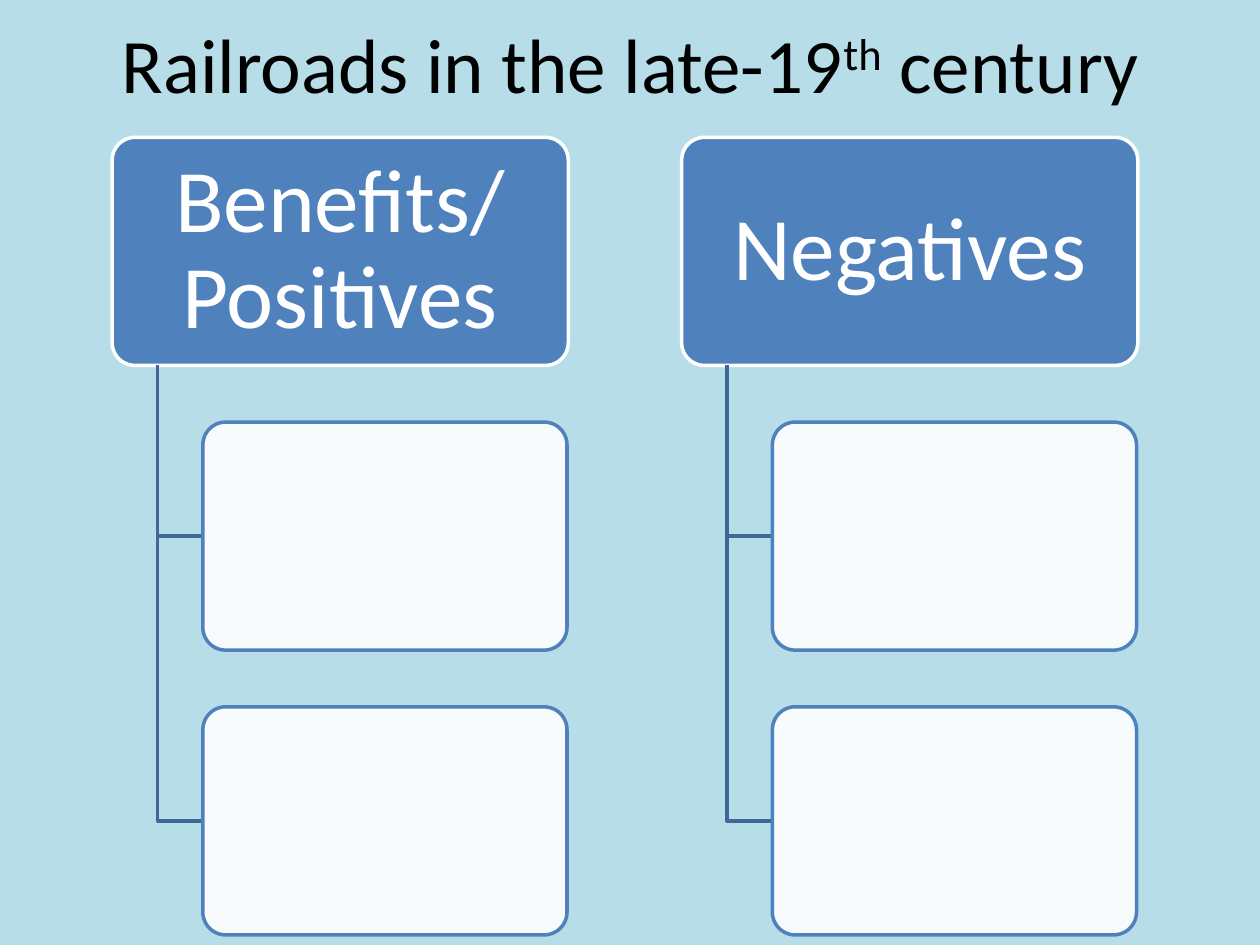
from dataclasses import dataclass

from lxml.etree import SubElement
from pptx import Presentation
from pptx.dml.color import RGBColor
from pptx.dml.fill import FillFormat
from pptx.enum.shapes import MSO_SHAPE
from pptx.enum.text import MSO_ANCHOR, PP_ALIGN
from pptx.oxml.ns import qn
from pptx.shapes.autoshape import Shape
from pptx.slide import Slide
from pptx.util import Inches, Pt

BACKGROUND, BLUE, DARK_BLUE = "B7DEE8", "4F81BD", "3F6797"
WHITE, BLACK = "FFFFFF", "000000"

# Every box has the same height; rows repeat at an equal pitch
BOX_HEIGHT = 1.81
HEADING_TOP, HEADING_WIDTH = 1.09, 3.62
ROW_PITCH = 2.26
ANSWER_INDENT, ANSWER_WIDTH = 0.72, 2.89
STEM_INDENT = ANSWER_INDENT / 2
ANSWER_ROWS = 2


@dataclass
class Branch:
    heading: str
    left: float


BRANCHES = [Branch("Benefits/ Positives", 0.89), Branch("Negatives", 5.41)]


def paint(fill: FillFormat, color: str) -> None:
    fill.solid()
    fill.fore_color.rgb = RGBColor.from_string(color)


def outline(shape: Shape, color: str) -> None:
    paint(shape.line.fill, color)
    shape.line.width = Pt(2)
    shape.shadow.inherit = False


def add_box(slide: Slide, left: float, top: float, width: float,
            fill: str, border: str) -> Shape:
    box = slide.shapes.add_shape(
        MSO_SHAPE.ROUNDED_RECTANGLE,
        Inches(left), Inches(top), Inches(width), Inches(BOX_HEIGHT))
    box.adjustments[0] = 0.1
    paint(box.fill, fill)
    outline(box, border)
    return box


def add_heading(slide: Slide, branch: Branch) -> None:
    box = add_box(slide, branch.left, HEADING_TOP, HEADING_WIDTH, BLUE, WHITE)
    frame = box.text_frame
    frame.word_wrap = True
    frame.vertical_anchor = MSO_ANCHOR.MIDDLE
    frame.margin_left = frame.margin_right = Inches(0.11)
    frame.margin_top = frame.margin_bottom = Inches(0.07)
    paragraph = frame.paragraphs[0]
    paragraph.text = branch.heading
    paragraph.alignment = PP_ALIGN.CENTER
    paragraph.line_spacing = 0.9
    paragraph.font.name = "Calibri"
    paragraph.font.size = Pt(51)
    paint(paragraph.font.fill, WHITE)


def add_answer(slide: Slide, branch: Branch, row: int) -> None:
    left = branch.left + ANSWER_INDENT
    top = HEADING_TOP + row * ROW_PITCH

    # Elbow from the heading down to the middle of the answer box
    stem = Inches(branch.left + STEM_INDENT)
    middle = Inches(top + BOX_HEIGHT / 2)
    builder = slide.shapes.build_freeform(
        stem, Inches(HEADING_TOP + BOX_HEIGHT))
    builder.add_line_segments(
        [(stem, middle), (Inches(left), middle)], close=False)
    elbow = builder.convert_to_shape()
    elbow.fill.background()
    outline(elbow, DARK_BLUE)

    # Slightly see-through answer box
    box = add_box(slide, left, top, ANSWER_WIDTH, WHITE, BLUE)
    color = box.fill._xPr.find(qn("a:solidFill"))[0]
    SubElement(color, qn("a:alpha"), val="90000")


def add_title(slide: Slide) -> None:
    title = slide.shapes.title
    title.left, title.top = Inches(0.5), Inches(0.08)
    title.width, title.height = Inches(9), Inches(0.83)
    title.text_frame.vertical_anchor = MSO_ANCHOR.MIDDLE
    paragraph = title.text_frame.paragraphs[0]
    paragraph.alignment = PP_ALIGN.CENTER
    paragraph.font.name = "Calibri"
    paragraph.font.size = Pt(44)
    paint(paragraph.font.fill, BLACK)
    for text in ("Railroads in the late-19", "th", " century"):
        run = paragraph.add_run()
        run.text = text
        if text == "th":
            run.font._element.set("baseline", "30000")


def main() -> None:
    presentation = Presentation()
    presentation.slide_width, presentation.slide_height = Inches(10), Inches(7.5)
    slide = presentation.slides.add_slide(presentation.slide_layouts[5])
    paint(slide.background.fill, BACKGROUND)
    add_title(slide)
    for branch in BRANCHES:
        add_heading(slide, branch)
        for row in range(1, ANSWER_ROWS + 1):
            add_answer(slide, branch, row)
    presentation.save("out.pptx")


if __name__ == "__main__":
    main()
